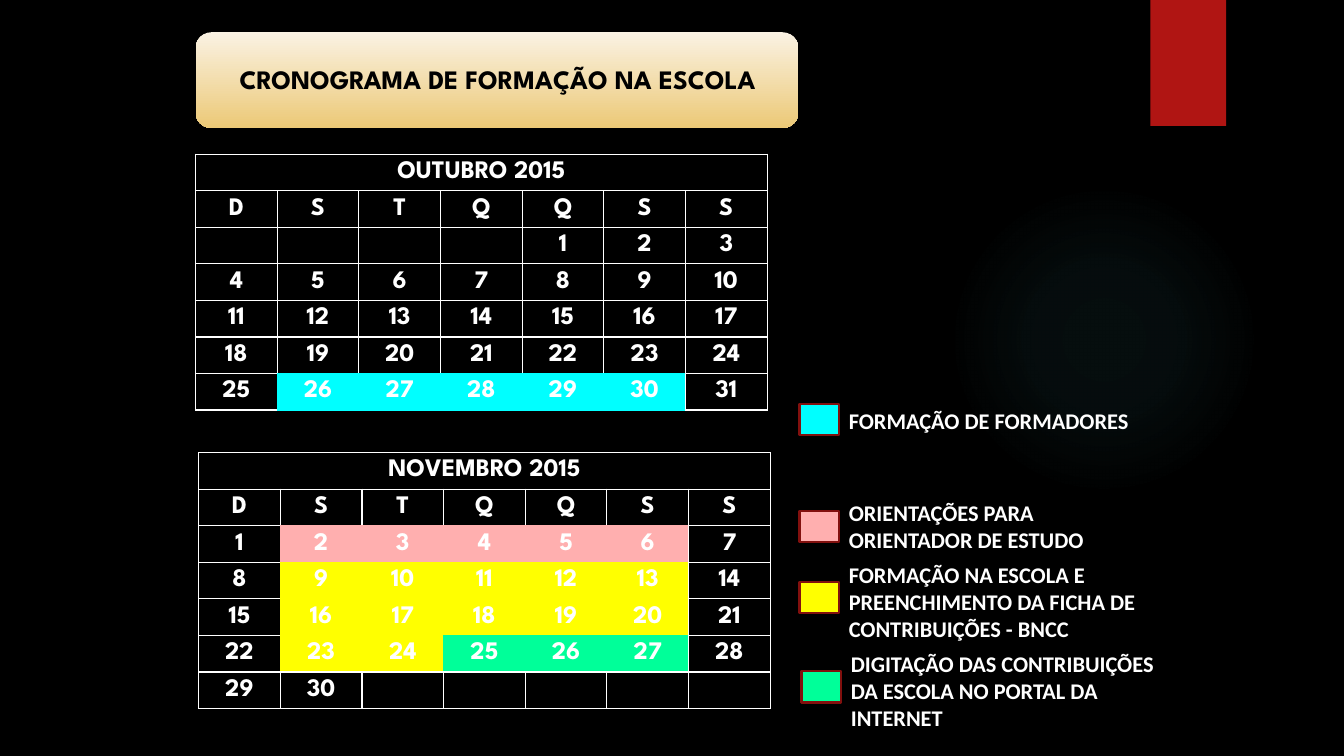
from dataclasses import dataclass, field

from lxml import etree
from pptx import Presentation
from pptx import util as u
from pptx.dml.color import RGBColor
from pptx.enum import shapes, text
from pptx.oxml.ns import qn

WHITE, BLACK, RED, DARK_RED, TEAL = "FFFFFF", "000000", "B01513", "82100E", "50B9C1"
CYAN, PINK, YELLOW, GREEN = "00FFFF", "FFAFAF", "FFFF00", "00FF99"
HEADING_FONT, LEGEND_FONT = "League Spartan", "Calibri"
WEEKDAYS = "DSTQQSS"
WEEKS = 5


@dataclass
class Month:
    name: str
    left: float
    top: float
    first_column: int
    days: int
    marked: dict[int, str] = field(default_factory=dict)


@dataclass
class LegendEntry:
    label: str
    color: str
    left: float
    swatch_top: float
    text_top: float
    text_height: float


# Positions are percentages of the slide's width and height
MONTHS = [
    Month("OUTUBRO 2015", 14.55, 20.4, 4, 31, dict.fromkeys(range(26, 31), CYAN)),
    Month("NOVEMBRO 2015", 14.78, 59.87, 0, 30, {
        **dict.fromkeys(range(2, 7), PINK),
        **dict.fromkeys([*range(9, 14), *range(16, 21), 23, 24], YELLOW),
        **dict.fromkeys(range(25, 28), GREEN),
    }),
]
LEGEND = [
    LegendEntry("FORMAÇÃO DE FORMADORES", CYAN, 59.49, 53.47, 53.2, 4.93),
    LegendEntry("ORIENTAÇÕES PARA ORIENTADOR DE ESTUDO", PINK, 59.49, 67.6, 65.33, 8.53),
    LegendEntry("FORMAÇÃO NA ESCOLA E PREENCHIMENTO DA FICHA DE CONTRIBUIÇÕES - BNCC",
                YELLOW, 59.49, 76.93, 73.6, 12.13),
    LegendEntry("DIGITAÇÃO DAS CONTRIBUIÇÕES DA ESCOLA NO PORTAL DA INTERNET",
                GREEN, 59.64, 88.8, 85.33, 12.13),
]

prs = Presentation()
prs.slide_width, prs.slide_height = u.Inches(13.33), u.Inches(7.5)
s = prs.slides.add_slide(prs.slide_layouts[5])


def rgb(color: str) -> RGBColor:
    return RGBColor.from_string(color)


def box(x: float, y: float, w: float, h: float) -> tuple[int, int, int, int]:
    """Turn shares of the slide into left, top, width and height."""
    return (int(prs.slide_width * x / 100), int(prs.slide_height * y / 100),
            int(prs.slide_width * w / 100), int(prs.slide_height * h / 100))


def add_shape(kind, place: tuple[int, int, int, int], color: str, line: str = ""):
    sp = s.shapes.add_shape(kind, *place)
    sp.shadow.inherit = False
    sp.fill.solid()
    sp.fill.fore_color.rgb = rgb(color)
    if line:
        sp.line.color.rgb = rgb(line)
        sp.line.width = u.Pt(1.5)
    else:
        sp.line.fill.background()
    return sp


def format_text(p, font: str, size: float, color: str, align=None) -> None:
    p.alignment = align
    for r in p.runs:
        r.font.name, r.font.size, r.font.bold = font, u.Pt(size), True
        r.font.color.rgb = rgb(color)


def set_borders(cell, color: str) -> None:
    tc_pr = cell._tc.get_or_add_tcPr()
    for i, side in enumerate(("a:lnL", "a:lnR", "a:lnT", "a:lnB")):
        ln = etree.Element(qn(side), w="12700")
        fill = etree.SubElement(ln, qn("a:solidFill"))
        etree.SubElement(fill, qn("a:srgbClr"), val=color)
        tc_pr.insert(i, ln)


def fill_cell(cell, label: str, color: str = "") -> None:
    cell.margin_top = cell.margin_bottom = 0
    cell.vertical_anchor = text.MSO_ANCHOR.MIDDLE
    if color:
        cell.fill.solid()
        cell.fill.fore_color.rgb = rgb(color)
    else:
        cell.fill.background()
    set_borders(cell, color or WHITE)
    cell.text_frame.text = label
    format_text(cell.text_frame.paragraphs[0], HEADING_FONT, 18, WHITE, text.PP_ALIGN.CENTER)


def add_month(month: Month) -> None:
    place = box(month.left, month.top, 42.53, 33.87)
    table = s.shapes.add_table(WEEKS + 2, len(WEEKDAYS), *place).table
    table.first_row = table.horz_banding = False
    for col, weekday in enumerate(WEEKDAYS):
        fill_cell(table.cell(0, col), "" if col else month.name)
        fill_cell(table.cell(1, col), weekday)
        for week in range(WEEKS):
            day = week * len(WEEKDAYS) + col - month.first_column + 1
            label = str(day) if 1 <= day <= month.days else ""
            fill_cell(table.cell(week + 2, col), label, month.marked.get(day, ""))
    table.cell(0, 0).merge(table.cell(0, len(WEEKDAYS) - 1))


def add_legend_entry(entry: LegendEntry) -> None:
    add_shape(shapes.MSO_SHAPE.RECTANGLE, box(entry.left, entry.swatch_top, 2.93, 4.13),
              entry.color, DARK_RED)
    tb = s.shapes.add_textbox(*box(entry.left + 2.93, entry.text_top, 24.23, entry.text_height))
    tf = tb.text_frame
    tf.word_wrap = True
    tf.text = entry.label
    format_text(tf.paragraphs[0], LEGEND_FONT, 16, WHITE)


def add_glow() -> None:
    sp = add_shape(shapes.MSO_SHAPE.OVAL, box(70.59, 24.4, 23.11, 41.07), TEAL)
    grad = etree.Element(qn("a:gradFill"), rotWithShape="1")
    stops = etree.SubElement(grad, qn("a:gsLst"))
    for position, alpha in ((0, 7), (36, 6), (69, 0)):
        gs = etree.SubElement(stops, qn("a:gs"), pos=str(position * 1000))
        clr = etree.SubElement(gs, qn("a:srgbClr"), val=TEAL)
        etree.SubElement(clr, qn("a:alpha"), val=str(alpha * 1000))
    circle = etree.SubElement(grad, qn("a:path"), path="circle")
    etree.SubElement(circle, qn("a:fillToRect"), l="50000", t="50000", r="50000", b="50000")
    sp_pr = sp.element.spPr
    sp_pr.replace(sp_pr.find(qn("a:solidFill")), grad)


def add_title() -> None:
    banner = add_shape(shapes.MSO_SHAPE.ROUNDED_RECTANGLE, box(14.55, 4.27, 44.86, 12.67), WHITE)
    banner.fill.gradient()
    banner.fill.gradient_angle = 270
    for stop, color in zip(banner.fill.gradient_stops, ("FAF2E3", "ECC977")):
        stop.color.rgb = rgb(color)

    title = s.shapes.title
    title.left, title.top, title.width, title.height = box(14.93, 4.93, 44.19, 11.47)
    banner.element.addnext(title.element)
    tf = title.text_frame
    tf.text = "CRONOGRAMA DE FORMAÇÃO NA ESCOLA"
    tf.word_wrap = True
    tf.auto_size = text.MSO_AUTO_SIZE.NONE
    tf.vertical_anchor = text.MSO_ANCHOR.MIDDLE
    tf.margin_left = tf.margin_right = tf.margin_top = tf.margin_bottom = u.Inches(0.08)
    p = tf.paragraphs[0]
    p.line_spacing = 0.9
    format_text(p, HEADING_FONT, 19, BLACK, text.PP_ALIGN.CENTER)


# Background and decoration
s.background.fill.solid()
s.background.fill.fore_color.rgb = rgb(BLACK)
add_glow()
add_shape(shapes.MSO_SHAPE.RECTANGLE, box(85.6, 0, 5.63, 16.67), RED)

# Title, calendars and legend
add_title()
for month in MONTHS:
    add_month(month)
for entry in LEGEND:
    add_legend_entry(entry)

prs.save("out.pptx")
